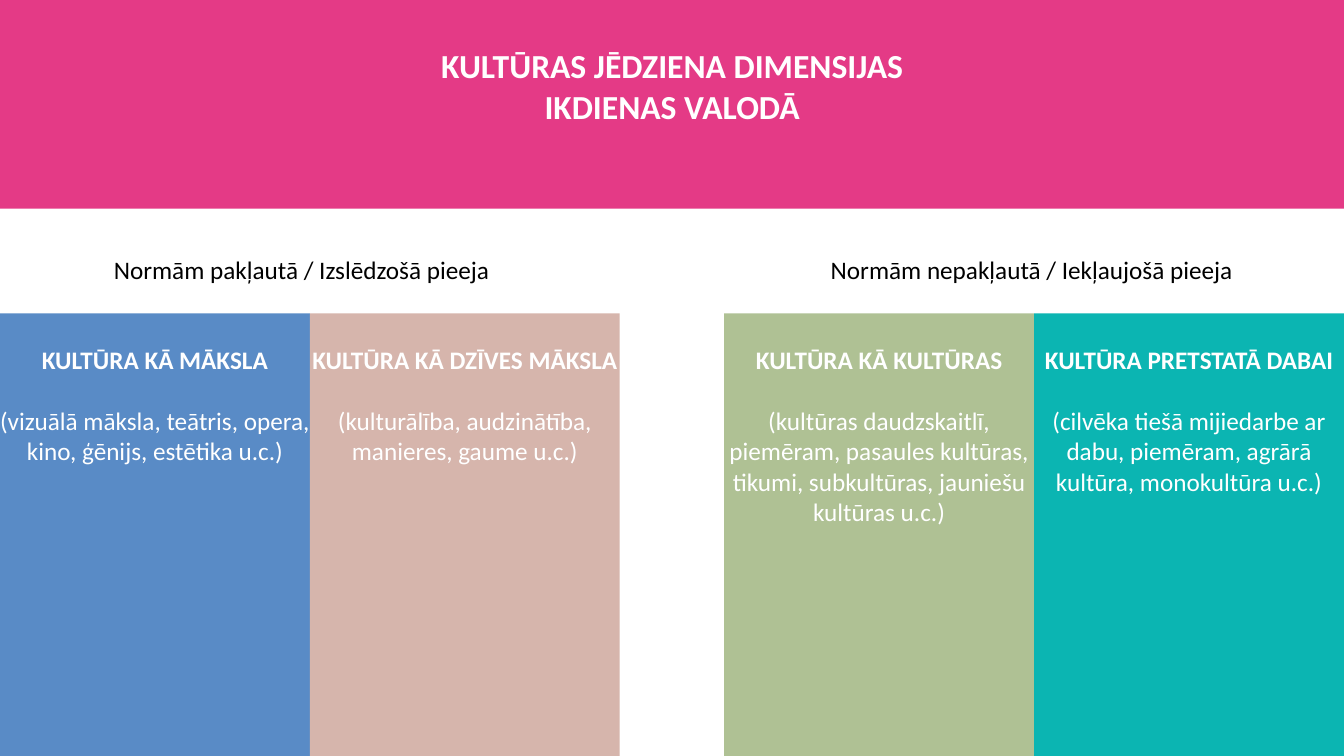
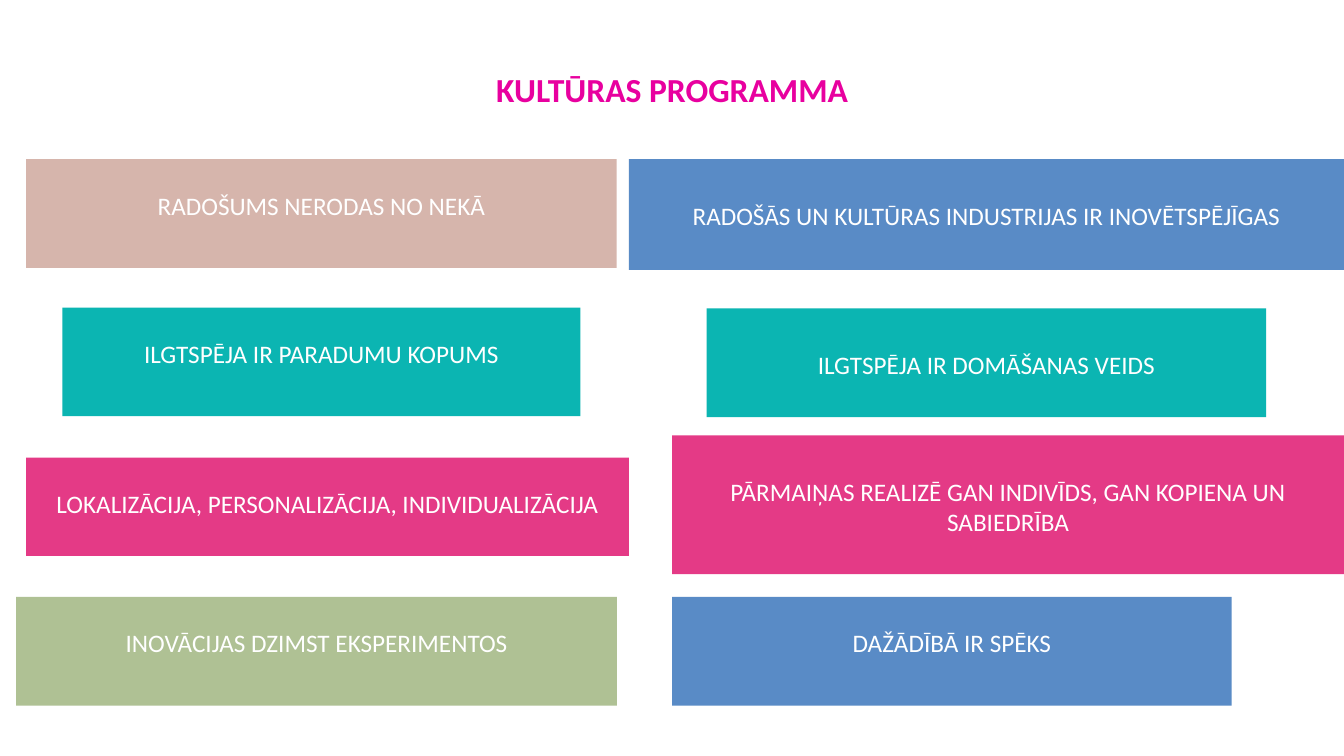
from pptx import Presentation
from pptx.dml.color import RGBColor
from pptx.enum import shapes, text
from pptx.util import Cm, Pt

# Shared colours and styles
WHITE = RGBColor(0xFF, 0xFF, 0xFF)
BLACK = RGBColor(0x00, 0x00, 0x00)
MAGENTA = RGBColor(0xE8, 0x00, 0x9F)
PINK = RGBColor(0xE4, 0x3A, 0x86)
BLUE = RGBColor(0x59, 0x8B, 0xC6)
TAN = RGBColor(0xD6, 0xB5, 0xAC)
GREEN = RGBColor(0xAF, 0xC1, 0x94)
TEAL = RGBColor(0x0B, 0xB5, 0xB2)

FONT = "Calibri"
BODY = {"size": Pt(18), "bold": False}
HEADING = {"size": Pt(18), "bold": True}
TITLE = {"size": Pt(24), "bold": True}

SLIDE_W, SLIDE_H = 33.87, 19.05
TITLE_LEFT, TITLE_W = 10.41, 13.06
LINE = 0.78  # one line of body text
TALL_LINE = 1.03  # one line of title text

# Slide 1 content
DIMENSIONS_TITLE = "KULTŪRAS JĒDZIENA DIMENSIJAS IKDIENAS VALODĀ"
COLUMN_W, COLUMN_TOP = 7.81, 7.9
LABEL_TOP, LABEL_H = 6.27, 1.02
BAND_H = 5.26
# label, left, label width, columns (fill, heading, examples)
APPROACHES = [
    ("Normām pakļautā / Izslēdzošā pieeja", 0, 15.2, [
        (BLUE, "KULTŪRA KĀ MĀKSLA",
         "(vizuālā māksla, teātris, opera, kino, ģēnijs, estētika u.c.)"),
        (TAN, "KULTŪRA KĀ DZĪVES MĀKSLA",
         "(kulturālība, audzinātība, manieres, gaume u.c.)"),
    ]),
    ("Normām nepakļautā / Iekļaujošā pieeja", SLIDE_W - 2 * COLUMN_W, 15.5, [
        (GREEN, "KULTŪRA KĀ KULTŪRAS",
         "(kultūras daudzskaitlī, piemēram, pasaules kultūras, tikumi, "
         "subkultūras, jauniešu kultūras u.c.)"),
        (TEAL, "KULTŪRA PRETSTATĀ DABAI",
         "(cilvēka tiešā mijiedarbe ar dabu, piemēram, agrārā kultūra, "
         "monokultūra u.c.)"),
    ]),
]

# Slide 2 content: words, fill, (left, top, width, height), top inset
PROGRAMME_TITLE = "KULTŪRAS PROGRAMMA"
THESES = [
    ("RADOŠUMS NERODAS NO NEKĀ", TAN, (0.66, 4.01, 14.88, 2.74), LINE),
    ("RADOŠĀS UN KULTŪRAS INDUSTRIJAS IR INOVĒTSPĒJĪGAS", BLUE,
     (15.85, 4.01, 18.02, 2.79), TALL_LINE),
    ("ILGTSPĒJA IR PARADUMU KOPUMS", TEAL, (1.57, 7.75, 13.06, 2.74), LINE),
    ("ILGTSPĒJA IR DOMĀŠANAS VEIDS", TEAL,
     (17.81, 7.77, 14.1, 2.74), TALL_LINE),
    ("LOKALIZĀCIJA, PERSONALIZĀCIJA, INDIVIDUALIZĀCIJA", PINK,
     (0.66, 11.53, 15.19, 2.48), LINE),
    ("PĀRMAIŅAS REALIZĒ GAN INDIVĪDS, GAN KOPIENA UN SABIEDRĪBA", PINK,
     (16.94, 10.97, 16.93, 3.5), TALL_LINE),
    ("INOVĀCIJAS DZIMST EKSPERIMENTOS", GREEN,
     (0.41, 15.04, 15.14, 2.74), LINE),
    ("DAŽĀDĪBĀ IR SPĒKS", BLUE, (16.94, 15.04, 14.1, 2.74), LINE),
]


def write(box, paragraphs, color, top_inset=0.0, anchor=text.MSO_ANCHOR.TOP):
    """Fill a box with centred paragraphs, one blank line's height apart."""
    frame = box.text_frame
    settings = {"word_wrap": True, "vertical_anchor": anchor,
                "margin_left": 0, "margin_right": 0,
                "margin_top": Cm(top_inset), "margin_bottom": 0}
    for name, value in settings.items():
        setattr(frame, name, value)
    for index, (words, style) in enumerate(paragraphs):
        para = frame.add_paragraph() if index else frame.paragraphs[0]
        para.alignment = text.PP_ALIGN.CENTER
        if index:
            para.space_before = Pt(22)
        span = para.add_run()
        span.text = words
        span.font.name = FONT
        span.font.color.rgb = color
        for name, value in style.items():
            setattr(span.font, name, value)


def add_block(page, place, fill):
    block = page.shapes.add_shape(
        shapes.MSO_SHAPE.RECTANGLE, *[Cm(length) for length in place])
    block.shadow.inherit = False
    block.fill.solid()
    block.fill.fore_color.rgb = fill
    block.line.fill.background()
    return block


def add_words(page, place, words, style, color):
    box = page.shapes.add_textbox(*[Cm(length) for length in place])
    write(box, [(words, style)], color, anchor=text.MSO_ANCHOR.MIDDLE)


def add_title(page, words, top, height, color):
    add_words(page, (TITLE_LEFT, top, TITLE_W, height), words, TITLE, color)


def build_dimensions(page):
    # Title band
    add_block(page, (0, 0, SLIDE_W, BAND_H), PINK)
    add_title(page, DIMENSIONS_TITLE, 1.12, 2.08, WHITE)
    # Two approaches, each a label over a pair of columns
    for label, left, width, columns in APPROACHES:
        add_words(page, (left, LABEL_TOP, width, LABEL_H), label, BODY, BLACK)
        for index, (fill, heading, examples) in enumerate(columns):
            place = (left + index * COLUMN_W, COLUMN_TOP,
                     COLUMN_W, SLIDE_H - COLUMN_TOP)
            block = add_block(page, place, fill)
            write(block, [(heading, HEADING), (examples, BODY)], WHITE, LINE)


def build_programme(page):
    add_title(page, PROGRAMME_TITLE, 1.71, 1.07, MAGENTA)
    # Theses
    for words, fill, place, top_inset in THESES:
        write(add_block(page, place, fill), [(words, BODY)], WHITE, top_inset)


def main():
    deck = Presentation()
    deck.slide_width, deck.slide_height = Cm(SLIDE_W), Cm(SLIDE_H)
    for build in (build_dimensions, build_programme):
        build(deck.slides.add_slide(deck.slide_layouts[6]))
    deck.save("out.pptx")


if __name__ == "__main__":
    main()
